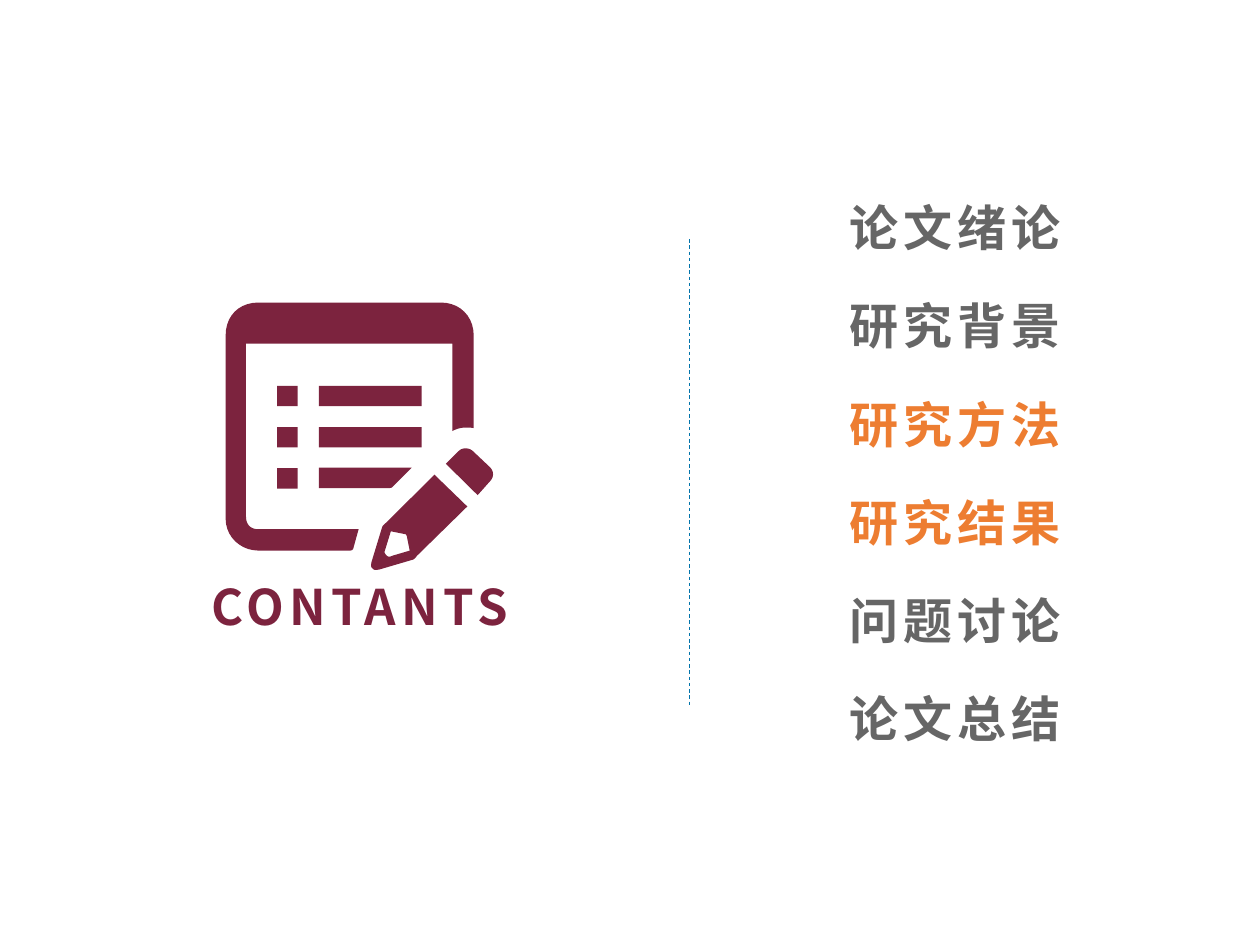
"""Build the contents slide: a notepad icon, a dashed divider and six topics."""
from lxml.etree import SubElement
from pptx import Presentation
from pptx.dml.color import RGBColor
from pptx.enum.dml import MSO_LINE_DASH_STYLE as Dash
from pptx.enum.shapes import MSO_CONNECTOR as Connector, MSO_SHAPE as Shape
from pptx.enum.text import MSO_AUTO_SIZE as AutoSize, PP_ALIGN as Align
from pptx.oxml.ns import qn
from pptx.util import Cm, Pt

MAROON = RGBColor(0x7C, 0x23, 0x3E)
GRAY = RGBColor(0x66, 0x66, 0x66)
ORANGE = RGBColor(0xED, 0x7D, 0x31)
BLUE = RGBColor(0x01, 0x74, 0xAB)

TOPICS = [
    ("论文绪论", GRAY), ("研究背景", GRAY), ("研究方法", ORANGE),
    ("研究结果", ORANGE), ("问题讨论", GRAY), ("论文总结", GRAY),
]

FRAME = [
    (7.23, 10.67), (7.13, 11.03), (7.13, 11.06, 7.11, 11.1, 7.06, 11.1),
    (5.21, 11.1), (4.85, 11.1, 4.55, 10.82, 4.55, 10.46),
    (4.55, 6.76), (4.55, 6.38, 4.81, 6.1, 5.21, 6.1),
    (8.89, 6.1), (9.27, 6.1, 9.55, 6.38, 9.55, 6.76),
    (9.55, 8.63), (9.4, 8.61, 9.27, 8.61, 9.12, 8.69),
    (9.12, 6.93), (4.96, 6.93), (4.96, 10.42),
    (4.96, 10.57, 5.05, 10.67, 5.21, 10.67),
]
PENCIL = [
    (8.76, 9.57), (9.42, 10.21), (8.41, 11.2),
    (8.38, 11.24, 8.36, 11.26, 8.33, 11.28), (7.65, 11.48),
    (7.59, 11.49, 7.54, 11.5, 7.51, 11.46),
    (7.47, 11.43, 7.48, 11.38, 7.49, 11.33), (7.7, 10.64),
    (7.71, 10.61, 7.72, 10.59, 7.75, 10.57),
]
NIB = [
    (7.88, 10.71), (7.75, 11.13), (7.79, 11.23, 7.84, 11.24, 7.92, 11.2),
    (8.26, 11.1), (8.2, 10.8), (8.18, 10.77),
]
ERASER = [
    (8.99, 9.35), (9.25, 9.09), (9.32, 9.02, 9.45, 9.02, 9.53, 9.09),
    (9.88, 9.42), (9.96, 9.5, 9.96, 9.62, 9.88, 9.7), (9.63, 9.98),
]
SHORT_BAR = [
    (6.43, 9.43), (8.3, 9.43), (7.93, 9.8), (7.91, 9.83, 7.88, 9.84, 7.85, 9.84),
    (6.43, 9.84),
]


def flatten(outline, steps=10):
    """Turn points and cubic curves, both in centimetres, into plain vertices."""
    points = []
    for item in outline:
        if len(item) == 2:
            points.append(item)
            continue
        corners = [points[-1], item[:2], item[2:4], item[4:]]
        for step in range(1, steps + 1):
            t = step / steps
            weights = ((1 - t) ** 3, 3 * t * (1 - t) ** 2, 3 * t * t * (1 - t), t ** 3)
            points.append(tuple(
                sum(weight * corner[axis] for weight, corner in zip(weights, corners))
                for axis in (0, 1)
            ))
    return [(Cm(x), Cm(y)) for x, y in points]


def write(paragraph, text, *, color, font, size=28, spacing=3, align=None):
    """Add formatted text to a paragraph."""
    paragraph.alignment = align
    run = paragraph.add_run()
    run.text = text
    run.font.size = Pt(size)
    run.font.bold = True
    run.font.color.rgb = color
    run.font.name = font
    properties = run.font._element
    properties.set("spc", str(spacing * 100))
    SubElement(properties, qn("a:ea")).set("typeface", font)


class SlideBuilder:
    """Hold the style and the current slide."""

    def __init__(self, slide, font="Noto Sans CJK SC", accent=MAROON):
        """Keep the slide, the font and the icon colour."""
        self.slide = slide
        self.font = font
        self.accent = accent
        self.icon = None

    def start_icon(self):
        """Start the group that holds the icon parts."""
        self.icon = self.slide.shapes.add_group_shape()

    def paint(self, shape):
        """Fill a shape with the accent colour, without line or shadow."""
        shape.shadow.inherit = False
        shape.fill.solid()
        shape.fill.fore_color.rgb = self.accent
        shape.line.fill.background()

    def outline(self, *contours):
        """Add one icon part made of closed contours."""
        first, *others = [flatten(contour) for contour in contours]
        builder = self.icon.shapes.build_freeform(*first[0])
        builder.add_line_segments(first[1:])
        for points in others:
            builder.move_to(*points[0])
            builder.add_line_segments(points[1:])
        self.paint(builder.convert_to_shape())

    def bar(self, left, top, width, height):
        """Add a rectangle to the icon."""
        self.paint(self.icon.shapes.add_shape(
            Shape.RECTANGLE, Cm(left), Cm(top), Cm(width), Cm(height)))

    def divider(self, x, top, bottom):
        """Add a dashed vertical line."""
        line = self.slide.shapes.add_connector(
            Connector.STRAIGHT, Cm(x), Cm(top), Cm(x), Cm(bottom))
        line.line.color.rgb = BLUE
        line.line.width = Pt(0.5)
        line.line.dash_style = Dash.DASH
        SubElement(line._element.spPr, qn("a:effectLst"))

    def label(self, text, left, top, width, color, align=None):
        """Add a one-line text box."""
        box = self.slide.shapes.add_textbox(Cm(left), Cm(top), Cm(width), Cm(1.45))
        frame = box.text_frame
        frame.word_wrap = True
        frame.auto_size = AutoSize.SHAPE_TO_FIT_TEXT
        write(frame.paragraphs[0], text, color=color, font=self.font, align=align)


def main():
    """Build and save the slide."""
    presentation = Presentation()
    presentation.slide_width, presentation.slide_height = Cm(25.4), Cm(19.05)
    builder = SlideBuilder(presentation.slides.add_slide(presentation.slide_layouts[6]))

    builder.divider(13.9, 4.82, 14.22)
    for row, (topic, color) in enumerate(TOPICS):
        builder.label(topic, 16.87, 3.86 + row * 1.98, 4.98, color)

    builder.start_icon()
    builder.outline(FRAME)
    builder.outline(PENCIL, NIB)
    builder.outline(ERASER)
    builder.outline(SHORT_BAR)
    for row in range(3):
        top = 7.78 + row * 0.83
        builder.bar(5.59, top, 0.41, 0.41)
        if row < 2:
            builder.bar(6.43, top, 2.07, 0.41)
    builder.label("CONTANTS", 3.56, 11.5, 7.39, MAROON, Align.CENTER)

    presentation.save("out.pptx")


if __name__ == "__main__":
    main()
